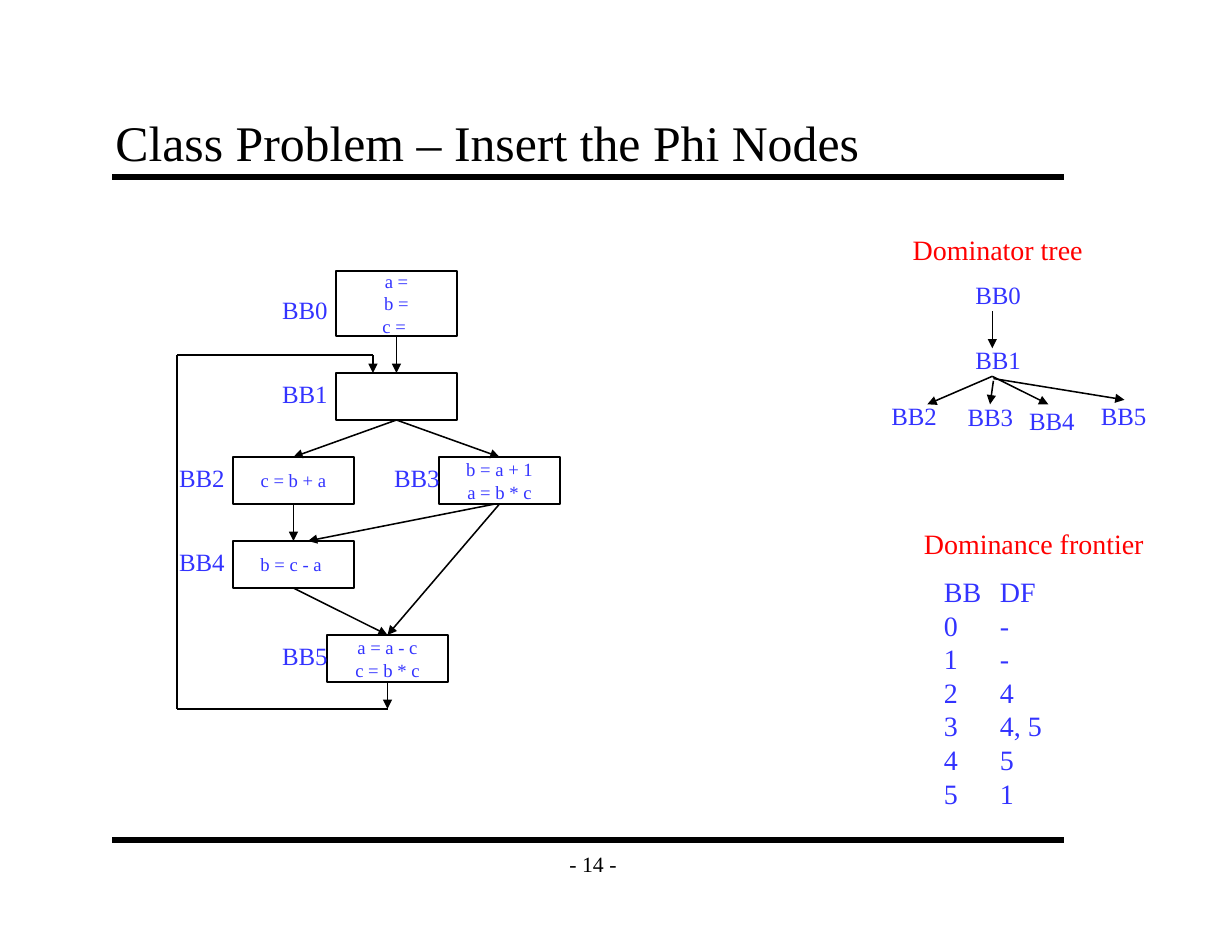
from dataclasses import dataclass

from lxml import etree
from pptx import Presentation
from pptx.dml.color import RGBColor
from pptx.enum.shapes import MSO_CONNECTOR, MSO_SHAPE
from pptx.enum.text import MSO_ANCHOR, MSO_AUTO_SIZE, PP_ALIGN
from pptx.oxml.ns import qn
from pptx.util import Inches, Pt

STRAIGHT = MSO_CONNECTOR.STRAIGHT
RECTANGLE = MSO_SHAPE.RECTANGLE
TOP_SIDE, BOTTOM_SIDE = 0, 2
LEFT, CENTER = PP_ALIGN.LEFT, PP_ALIGN.CENTER
TOP, MIDDLE, BOTTOM = MSO_ANCHOR.TOP, MSO_ANCHOR.MIDDLE, MSO_ANCHOR.BOTTOM


@dataclass(frozen=True)
class Theme:
    font: str = "Times New Roman"
    ink: RGBColor = RGBColor(0x00, 0x00, 0x00)
    blue: RGBColor = RGBColor(0x33, 0x33, 0xFF)
    red: RGBColor = RGBColor(0xFF, 0x00, 0x00)
    title: int = 32
    heading: int = 18
    label: int = 16
    footer: int = 14
    code: int = 12
    rule: int = 4
    thin: int = 1


THEME = Theme()
LABEL_SIZE = (0.61, 0.37)
BLOCK_WIDTH, BLOCK_HEIGHT = 1.08, 0.42


def write(frame, lines, size, color, align=LEFT, anchor=TOP, wrap=False):
    frame.word_wrap = wrap
    frame.vertical_anchor = anchor
    frame.text = "\n".join(lines)
    for para in frame.paragraphs:
        para.alignment = align
        para.font.name = THEME.font
        para.font.size = Pt(size)
        para.font.color.rgb = color


def add_text(page, box, lines, size, color, **layout):
    shape = page.shapes.add_textbox(*map(Inches, box))
    write(shape.text_frame, lines, size, color, **layout)
    shape.text_frame.auto_size = MSO_AUTO_SIZE.SHAPE_TO_FIT_TEXT
    return shape


def add_label(page, left, top, name):
    add_text(page, (left, top, *LABEL_SIZE), [name], THEME.label, THEME.blue)


def add_line(page, start, end, width=THEME.thin, arrow=True):
    line = page.shapes.add_connector(STRAIGHT, *map(Inches, (*start, *end)))
    line.line.color.rgb = THEME.ink
    line.line.width = Pt(width)
    if arrow:
        etree.SubElement(line.line._get_or_add_ln(), qn("a:tailEnd"), type="triangle")
    etree.SubElement(line._element.spPr, qn("a:effectLst"))
    return line


def add_frame(page, box, title, number):
    """Place the title, the two heavy rules and the page number."""
    left, top, width, height = box
    heading = page.shapes.title
    heading.left, heading.top = Inches(left - 0.08), Inches(top - 0.66)
    heading.width, heading.height = Inches(width), Inches(0.67)
    write(heading.text_frame, [title], THEME.title, THEME.ink, anchor=BOTTOM, wrap=True)
    heading.text_frame.auto_size = MSO_AUTO_SIZE.NONE
    heading.text_frame.margin_left = heading.text_frame.margin_right = Inches(0.11)
    heading.text_frame.margin_top = heading.text_frame.margin_bottom = Inches(0.06)
    for y in (top, top + height):
        add_line(page, (left, y), (left + width, y), THEME.rule, arrow=False)
    footer = add_text(page, (4.92, top + height, 0.75, 0.42), [number],
                      THEME.footer, THEME.ink, align=CENTER, anchor=MIDDLE)
    footer.text_frame.auto_size = MSO_AUTO_SIZE.NONE


def add_block(page, left, top, height, lines):
    block = page.shapes.add_shape(
        RECTANGLE, *map(Inches, (left, top, BLOCK_WIDTH, height)))
    block.shadow.inherit = False
    block.fill.background()
    block.line.color.rgb = THEME.ink
    block.line.width = Pt(THEME.thin)
    if lines:
        write(block.text_frame, lines, THEME.code, THEME.blue, CENTER, MIDDLE)
    return block


def add_flow_graph(page, left, top):
    # name: block offset, block height, label offset, code
    blocks = {
        "BB0": (1.5, 0, 0.58, (0.92, 0.16), ["a =", "b =", "c = "]),
        "BB1": (1.5, 0.91, BLOCK_HEIGHT, (0.92, 0.91), []),
        "BB2": (0.58, 1.66, BLOCK_HEIGHT, (0, 1.66), ["c = b + a"]),
        "BB3": (2.42, 1.66, BLOCK_HEIGHT, (1.92, 1.66), ["b = a + 1", "a = b * c"]),
        "BB4": (0.58, 2.41, BLOCK_HEIGHT, (0, 2.41), ["b = c - a "]),
        "BB5": (1.42, 3.25, BLOCK_HEIGHT, (0.92, 3.25), ["a = a - c", "c = b * c"]),
    }
    placed = {}
    for name, (x, y, height, (label_x, label_y), lines) in blocks.items():
        placed[name] = add_block(page, left + x, top + y, height, lines)
        add_label(page, left + label_x, top + label_y, name)

    edges = [("BB0", "BB1"), ("BB1", "BB2"), ("BB1", "BB3"),
             ("BB2", "BB4"), ("BB4", "BB5"), ("BB3", "BB5")]
    for source, target in edges:
        edge = add_line(page, (left, top), (left, top))
        edge.begin_connect(placed[source], BOTTOM_SIDE)
        edge.end_connect(placed[target], TOP_SIDE)
    add_line(page, (left + 2.92, top + 2.08), (left + 2.67 - 1.42, top + 2.41))

    # Back edge from BB5 round the left side to BB1
    exit_x = left + 1.42 + BLOCK_WIDTH / 2
    low, high = top + 3.91, top + 0.75
    leave = add_line(page, (exit_x, low), (exit_x, low))
    leave.begin_connect(placed["BB5"], BOTTOM_SIDE)
    route = [(exit_x, low), (left + 0.08, low), (left + 0.08, high),
             (left + 1.83, high), (left + 1.83, top + 0.91)]
    last = len(route) - 2
    for index, (start, end) in enumerate(zip(route, route[1:])):
        add_line(page, start, end, arrow=index == last)


def add_dominator_tree(page, left, top):
    add_text(page, (left + 0.19, top, 1.74, 0.4), ["Dominator tree"],
             THEME.heading, THEME.red)
    nodes = {"BB0": (0.75, 0.42), "BB1": (0.75, 1), "BB2": (0, 1.5),
             "BB3": (0.68, 1.51), "BB4": (1.23, 1.54), "BB5": (1.87, 1.5)}
    for name, (x, y) in nodes.items():
        add_label(page, left + x, top + y, name)
    arrows = [((1, 0.75), (1, 1.08)), ((1, 1.33), (0.42, 1.58)),
              ((1, 1.33), (1.5, 1.58)), ((1.01, 1.37), (0.98, 1.58)),
              ((1.01, 1.35), (2.18, 1.54))]
    for (x1, y1), (x2, y2) in arrows:
        add_line(page, (left + x1, top + y1), (left + x2, top + y2))


def add_dominance_frontier(page, left, top):
    add_text(page, (left, top, 2.19, 0.4), ["Dominance frontier"],
             THEME.heading, THEME.red)
    rows = [("BB", "DF"), ("0", "-"), ("1", "-"), ("2", "4"),
            ("3", "4, 5"), ("4", "5"), ("5", "1")]
    add_text(page, (left + 0.18, top + 0.43, 1.59, 2.22),
             ["\t".join(row) for row in rows], THEME.heading, THEME.blue)


def main():
    deck = Presentation()
    deck.slide_width, deck.slide_height = Inches(11), Inches(8.5)
    page = deck.slides.add_slide(deck.slide_layouts.get_by_name("Title Only"))
    add_frame(page, (1, 1.58, 8.5, 5.92),
              "Class Problem – Insert the Phi Nodes", "- 14 -")
    add_flow_graph(page, 1.5, 2.42)
    add_dominator_tree(page, 7.86, 2.03)
    add_dominance_frontier(page, 8.15, 4.65)
    deck.save("out.pptx")


if __name__ == "__main__":
    main()
